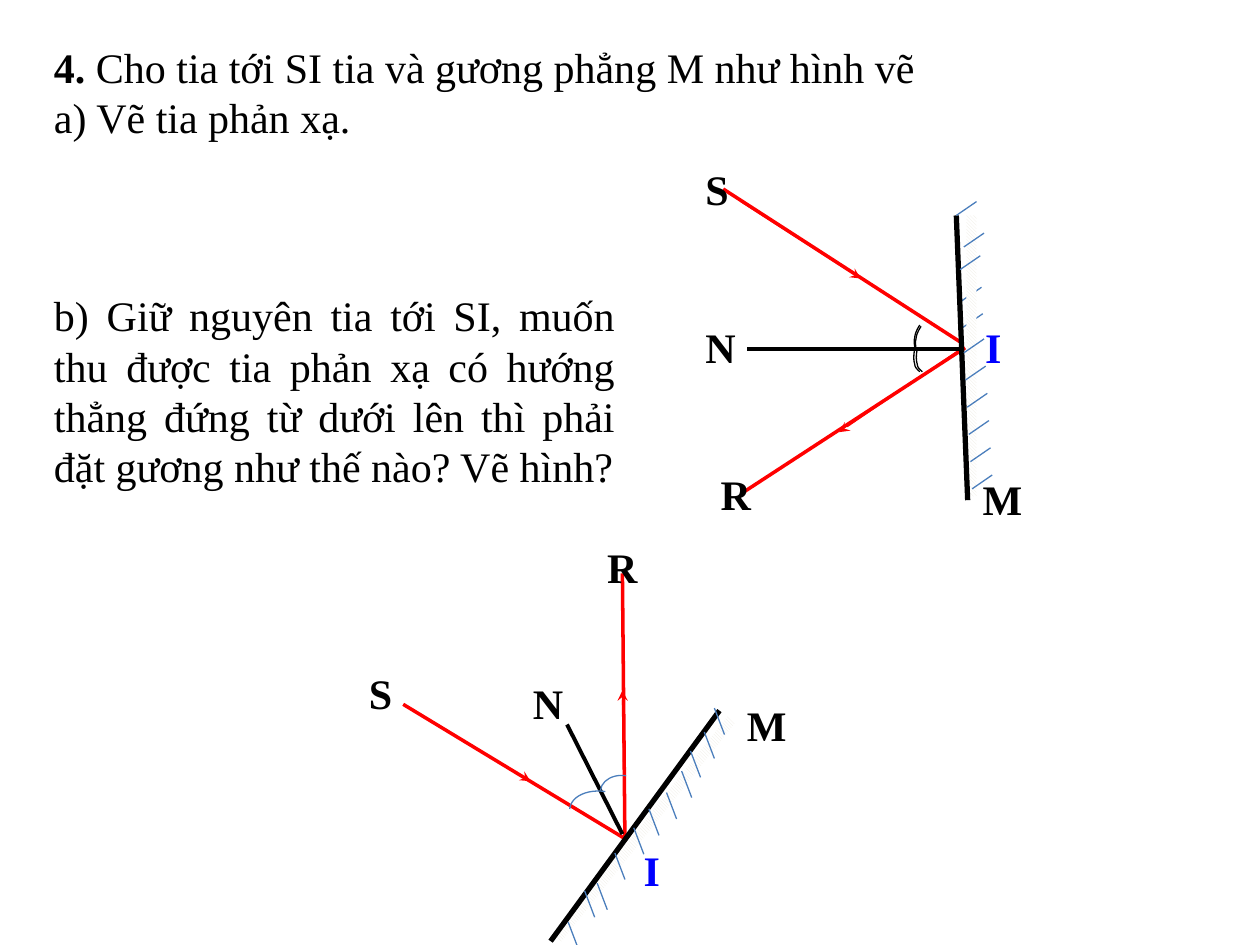
from dataclasses import dataclass

from lxml import etree
from pptx import Presentation
from pptx.dml.color import RGBColor
from pptx.enum.dml import MSO_PATTERN
from pptx.enum.shapes import MSO_CONNECTOR, MSO_SHAPE
from pptx.enum.text import MSO_AUTO_SIZE, PP_ALIGN
from pptx.oxml.ns import qn
from pptx.util import Inches, Pt

STRAIGHT = MSO_CONNECTOR.STRAIGHT
RECTANGLE, ARC = MSO_SHAPE.RECTANGLE, MSO_SHAPE.ARC
LIGHT_DIAGONAL = MSO_PATTERN.LIGHT_DOWNWARD_DIAGONAL
GROW = MSO_AUTO_SIZE.SHAPE_TO_FIT_TEXT
LEFT, JUSTIFY = PP_ALIGN.LEFT, PP_ALIGN.JUSTIFY


@dataclass(frozen=True)
class Theme:
    font: str = "Times New Roman"
    text_size: int = 24
    ink: RGBColor = RGBColor(0, 0, 0)
    point: RGBColor = RGBColor(0, 0, 255)
    ray: RGBColor = RGBColor(255, 0, 0)
    hatch: RGBColor = RGBColor(0x4B, 0x7E, 0xBC)
    glass: RGBColor = RGBColor(0xEE, 0xEC, 0xE1)
    paper: RGBColor = RGBColor(255, 255, 255)
    thin: float = 0.75
    ray_width: float = 2
    normal_width: float = 2.25
    mirror_width: float = 3


THEME = Theme()


def add_text(page, place, paragraphs, color=THEME.ink, align=LEFT):
    """Each paragraph is a list of (text, bold) runs."""
    box = page.shapes.add_textbox(*map(Inches, place))
    frame = box.text_frame
    frame.word_wrap = True
    frame.auto_size = GROW
    for index, runs in enumerate(paragraphs):
        para = frame.add_paragraph() if index else frame.paragraphs[0]
        para.alignment = align
        for text, bold in runs:
            span = para.add_run()
            span.text = text
            span.font.name = THEME.font
            span.font.size = Pt(THEME.text_size)
            span.font.bold = bold
            span.font.color.rgb = color


def add_label(page, letter, left, top, color=THEME.ink):
    add_text(page, (left, top, 0.62, 0.5), [[(letter, True)]], color)


def add_line(page, start, end, color, width, arrow=False):
    line = page.shapes.add_connector(STRAIGHT, *map(Inches, (*start, *end)))
    line.line.color.rgb = color
    line.line.width = Pt(width)
    if arrow:
        etree.SubElement(line.line._get_or_add_ln(), qn("a:tailEnd"), type="stealth")
    etree.SubElement(line._element.spPr, qn("a:effectLst"))


def add_ray(page, start, end, arrow_start, arrow_end):
    add_line(page, start, end, THEME.ray, THEME.ray_width)
    add_line(page, arrow_start, arrow_end, THEME.ray, THEME.thin, arrow=True)


def add_hatch(page, starts, offset):
    for x, y in starts:
        add_line(page, (x, y), (x + offset[0], y + offset[1]), THEME.hatch, THEME.thin)


def add_glass(page, left, top, rotation=0):
    glass = page.shapes.add_shape(RECTANGLE, *map(Inches, (left, top, 0.08, 2.23)))
    glass.shadow.inherit = False
    glass.rotation = rotation
    glass.fill.patterned()
    glass.fill.pattern = LIGHT_DIAGONAL
    glass.fill.fore_color.rgb = THEME.glass
    glass.fill.back_color.rgb = THEME.paper
    glass.line.fill.background()


def add_arc(page, place):
    arc = page.shapes.add_shape(ARC, *map(Inches, place))
    arc.shadow.inherit = False
    arc.rotation = 278.2
    arc.adjustments[0] = 161.03
    arc.adjustments[1] = 0
    arc.fill.background()
    arc.line.color.rgb = THEME.hatch
    arc.line.width = Pt(THEME.thin)


def bezier(controls, t):
    """Point at t on the cubic curve with four control points."""
    weights = ((1 - t) ** 3, 3 * t * (1 - t) ** 2, 3 * t * t * (1 - t), t ** 3)
    return tuple(Inches(sum(w * c[axis] for w, c in zip(weights, controls)))
                 for axis in (0, 1))


def add_angle_mark(page, controls, shift):
    """Two joined cubic curves, given by seven control points."""
    moved = [(x + shift[0], y + shift[1]) for x, y in controls]
    points = [bezier(moved[first:first + 4], step / 6)
              for first in (0, 3) for step in range(7)]
    builder = page.shapes.build_freeform(*points[0], scale=1.0)
    builder.add_line_segments(points[1:], close=False)
    mark = builder.convert_to_shape()
    mark.shadow.inherit = False
    mark.fill.background()
    mark.line.color.rgb = THEME.ink
    mark.line.width = Pt(THEME.thin)


def draw_reflection(page):
    # Reflected ray, normal and double angle marks
    add_ray(page, (5.88, 3.92), (7.66, 2.76), (7.61, 2.78), (6.66, 3.43))
    add_line(page, (5.93, 2.77), (7.64, 2.77), THEME.ink, THEME.normal_width)
    lower = [(7.28, 2.77), (7.27, 2.82), (7.27, 2.86), (7.28, 2.89),
             (7.28, 2.92), (7.31, 2.94), (7.32, 2.95)]
    upper = [(7.31, 2.59), (7.29, 2.62), (7.27, 2.66), (7.27, 2.69),
             (7.26, 2.72), (7.27, 2.75), (7.27, 2.77)]
    for controls, second in ((lower, (-0.02, 0)), (upper, (-0.01, -0.01))):
        for shift in ((0, 0), second):
            add_angle_mark(page, controls, shift)

    # Mirror with the incident ray; the first strokes lie under the glass
    slant = (-0.16, 0.11)
    add_hatch(page, [(7.79, 2.28), (7.8, 2.49)], slant)
    add_ray(page, (5.74, 1.5), (7.63, 2.72), (5.88, 1.6), (6.83, 2.21))
    add_glass(page, 7.67, 1.71)
    add_line(page, (7.59, 1.71), (7.68, 3.97), THEME.ink, THEME.mirror_width)
    even = [(7.81 + 0.013 * i, 2.69 + 0.216 * i) for i in range(6)]
    add_hatch(page, [(7.75, 1.6), (7.81, 1.85), (7.78, 2.03)] + even, slant)

    for letter, left, top in (("N", 5.5, 2.5), ("R", 5.62, 3.67),
                              ("S", 5.5, 1.25), ("M", 7.7, 3.71)):
        add_label(page, letter, left, top)
    add_label(page, "I", 7.72, 2.5, THEME.point)


def draw_turned_mirror(page):
    # Rays, normal and angle arcs
    add_ray(page, (4.94, 4.55), (4.96, 6.68), (4.96, 6.63), (4.94, 5.48))
    add_ray(page, (3.2, 5.59), (4.95, 6.65), (3.34, 5.67), (4.21, 6.2))
    add_line(page, (4.5, 5.75), (4.94, 6.62), THEME.ink, THEME.normal_width)
    add_arc(page, (4.61, 6.19, 0.34, 0.52))
    add_arc(page, (4.81, 6.11, 0.28, 0.37))

    # Mirror
    add_glass(page, 5.07, 5.47, 38.5)
    add_line(page, (5.71, 5.64), (4.37, 7.47), THEME.ink, THEME.mirror_width)
    add_hatch(page, [(5.67, 5.62), (5.59, 5.81), (5.48, 5.96), (5.41, 6.12),
                     (5.29, 6.29), (5.15, 6.42), (5.03, 6.57), (4.88, 6.77),
                     (4.74, 7.01), (4.64, 7.07), (4.51, 7.32)], (0.08, 0.21))

    for letter, left, top in (("S", 2.83, 5.25), ("M", 5.83, 5.5),
                              ("N", 4.13, 5.33), ("R", 4.72, 4.25)):
        add_label(page, letter, left, top)
    add_label(page, "I", 5.01, 6.65, THEME.point)


def main():
    deck = Presentation()
    deck.slide_width, deck.slide_height = Inches(10), Inches(7.5)
    page = deck.slides.add_slide(deck.slide_layouts[6])

    # Exercise wording
    add_text(page, (0.33, 0.28, 8.23, 0.91), [
        [("4. ", True), ("Cho tia tới SI tia và gương phẳng M như hình vẽ", False)],
        [("a) Vẽ tia phản xạ.", False)],
    ], align=JUSTIFY)
    add_text(page, (0.33, 2.25, 4.65, 1.72), [
        [("b) Giữ nguyên tia tới SI, muốn thu được tia phản xạ có hướng thẳng đứng "
          "từ dưới lên thì phải đặt gương như thế nào? Vẽ hình?", False)],
    ], align=JUSTIFY)

    draw_reflection(page)
    draw_turned_mirror(page)
    deck.save("out.pptx")


if __name__ == "__main__":
    main()
